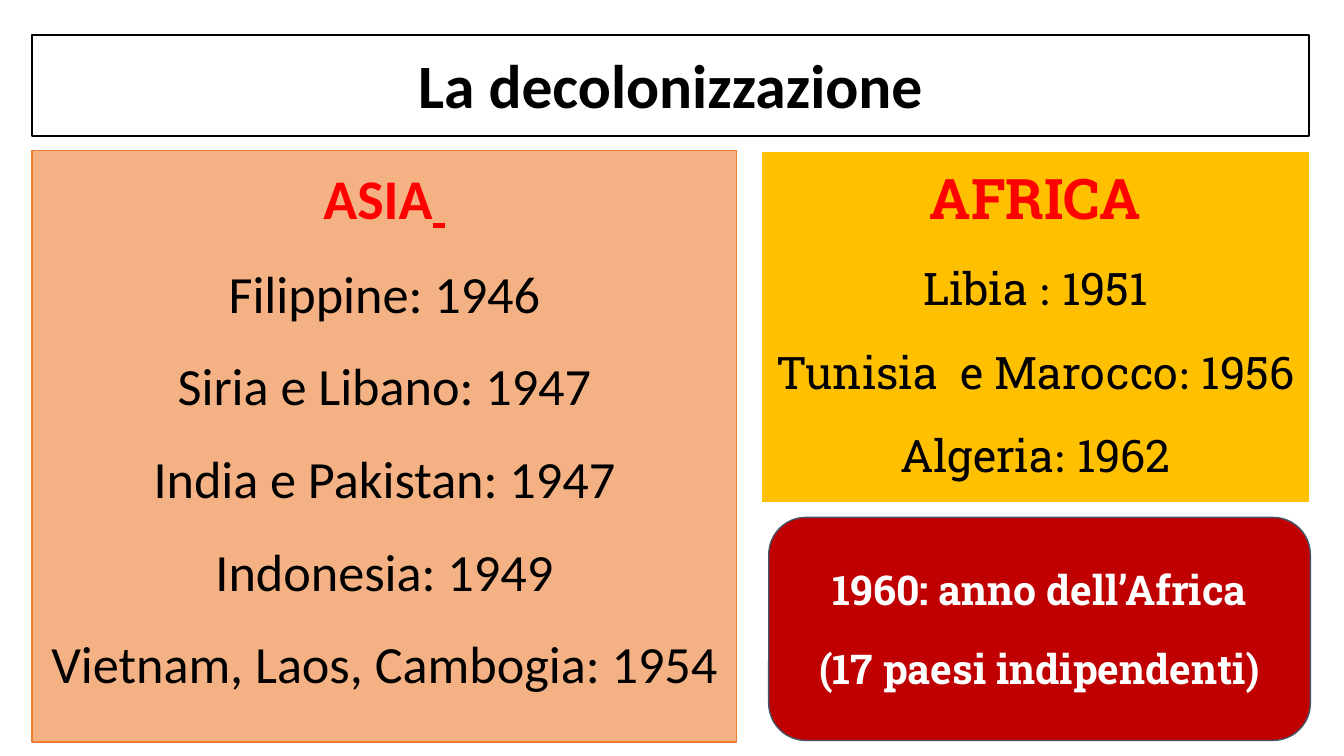
from pptx import Presentation
from pptx.dml.color import RGBColor
from pptx.enum.shapes import MSO_SHAPE
from pptx.enum.text import MSO_ANCHOR, PP_ALIGN
from pptx.util import Inches, Pt

SANS, SLAB = "Calibri", "Roboto Slab"
BLACK, WHITE, RED = "000000", "FFFFFF", "FF0000"
WIDTH = Inches(10)
HEIGHT = WIDTH * 9 // 16
CELL = WIDTH // 100  # the grid has 100 square columns across the slide


def paint(target, color):
    target.rgb = RGBColor.from_string(color)


def grid(*cells):
    return [round(n * CELL) for n in cells]


class Deck:
    def __init__(self):
        self.show = Presentation()
        self.show.slide_width, self.show.slide_height = WIDTH, HEIGHT
        self.slide = self.show.slides.add_slide(self.show.slide_layouts[6])

    def panel(self, area, fill, line, width=1, anchor=MSO_ANCHOR.TOP,
              kind=MSO_SHAPE.RECTANGLE):
        shape = self.slide.shapes.add_shape(kind, *grid(*area))
        shape.shadow.inherit = False
        shape.fill.solid()
        paint(shape.fill.fore_color, fill)
        paint(shape.line.color, line)
        shape.line.width = Pt(width)
        frame = shape.text_frame
        frame.word_wrap = True
        frame.vertical_anchor = anchor
        for side in ("left", "top", "right", "bottom"):
            setattr(frame, f"margin_{side}", CELL)
        return frame

    def line(self, frame, runs, color, **layout):
        """Write one centred paragraph; each run is a text and its font values."""
        par = frame.paragraphs[0]
        if par.runs:
            par = frame.add_paragraph()
        for name, value in {"alignment": PP_ALIGN.CENTER, **layout}.items():
            setattr(par, name, value)
        for text, style in runs:
            run = par.add_run()
            run.text = text
            paint(run.font.color, color)
            for name, value in style.items():
                setattr(run.font, name, value)

    def save(self):
        self.show.save("out.pptx")


def face(name, size, bold=False, **more):
    return {"name": name, "size": Pt(size), "bold": bold, **more}


def main():
    deck = Deck()
    gap = Pt(16)

    title = deck.panel((2.4, 2.6, 95, 7.5), WHITE, BLACK, anchor=MSO_ANCHOR.BOTTOM)
    deck.line(title, [("La decolonizzazione", face(SANS, 33, True))], BLACK,
              line_spacing=0.9)

    asia = deck.panel((2.4, 11.2, 52.4, 44), "F4B183", "ED7D31")
    deck.line(asia, [("ASIA", face(SANS, 30, True)),
                     (" ", face(SANS, 30, True, underline=True))], RED)
    for entry in ("Filippine: 1946", "Siria e Libano: 1947", "India e Pakistan: 1947",
                  "Indonesia: 1949", "Vietnam, Laos, Cambogia: 1954"):
        deck.line(asia, [(entry, face(SANS, 28))], BLACK, space_before=gap)

    africa = deck.panel((56.6, 11.2, 40.9, 26.3), "FFC000", WHITE, 1.5)
    deck.line(africa, [("AFRICA", face(SLAB, 30, True))], RED)
    for entry in ("Libia : 1951", "Tunisia  e Marocco: 1956", "Algeria: 1962"):
        land, colon, year = entry.partition(":")
        deck.line(africa, [(land, face(SLAB, 24)), (colon, face(SANS, 24)),
                           (year, face(SLAB, 24))], BLACK, space_before=gap)

    turn = deck.panel((57.2, 38.5, 40.3, 16.6), "C00000", "44546A", 0.75,
                      MSO_ANCHOR.MIDDLE, MSO_SHAPE.ROUNDED_RECTANGLE)
    bold = face(SLAB, 22, True)
    deck.line(turn, [("1960: anno dell’Africa", bold)], WHITE)
    deck.line(turn, [("(17 paesi indipendenti)", bold)], WHITE,
              space_before=gap, space_after=gap)

    deck.save()


if __name__ == "__main__":
    main()
